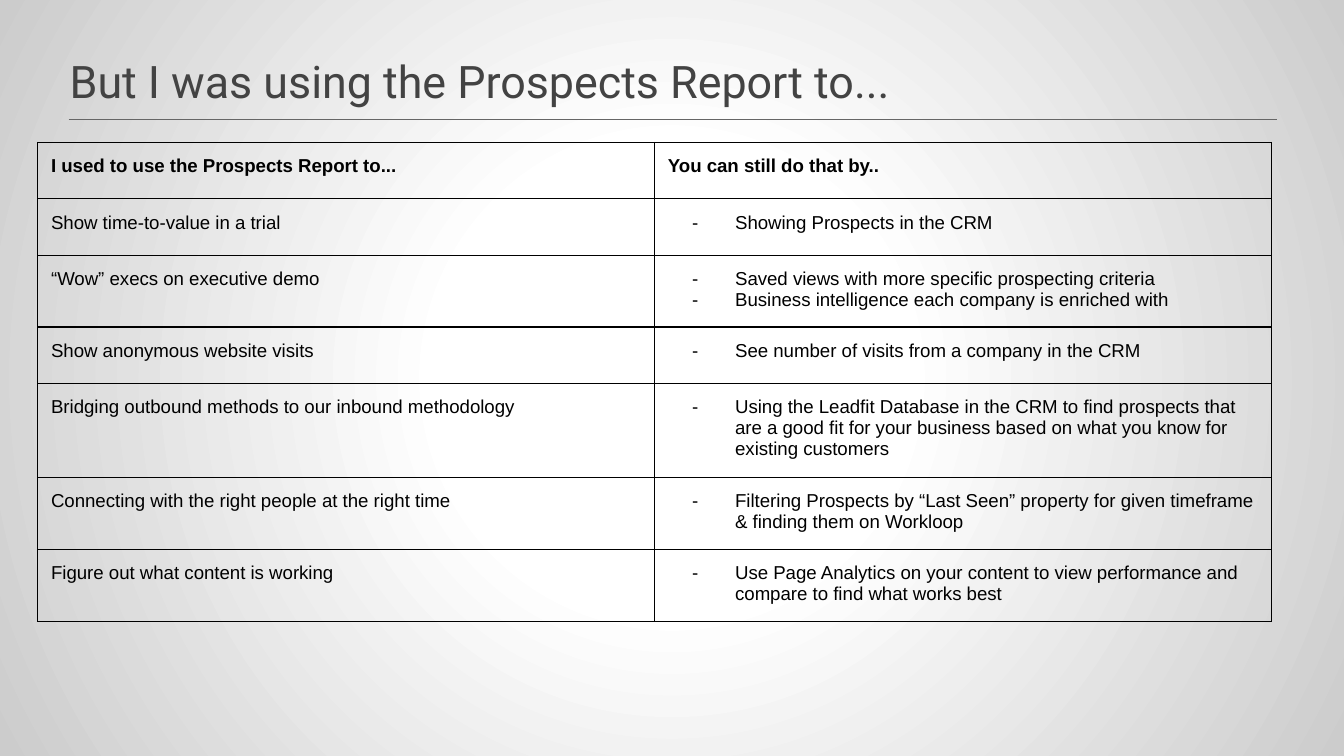
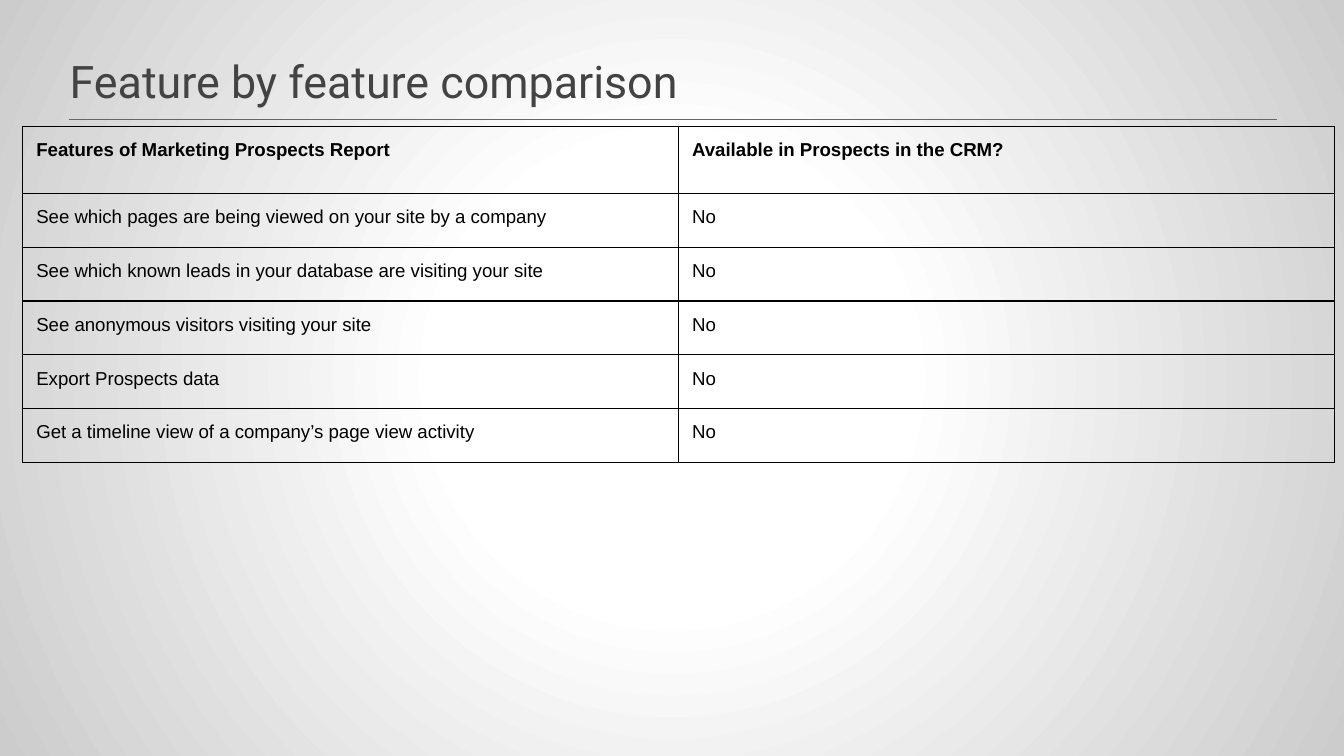
from dataclasses import dataclass

import pptx
import pptx.dml.color
import pptx.enum.shapes
import pptx.enum.text
import pptx.oxml
import pptx.oxml.ns
import pptx.presentation
import pptx.slide
import pptx.table
import pptx.text.text
import pptx.util
from pptx.dml.color import RGBColor
from pptx.util import Inches

TITLE_COLOR = RGBColor(0x43, 0x43, 0x43)
RULE_COLOR = RGBColor(0x66, 0x66, 0x66)
INK = RGBColor(0x00, 0x00, 0x00)
GLOW = RGBColor(0xFF, 0xFF, 0xFF)
EDGE = RGBColor(0xCC, 0xCC, 0xCC)

TITLE_FONT = "Roboto"
TITLE_SIZE = 24
TABLE_FONT = "Arial"
TABLE_SIZE = 10
INSET = Inches(0.1)
LINE_WIDTH = pptx.util.Pt(0.75)
NAMESPACES = pptx.oxml.ns.nsdecls("a")


@dataclass(frozen=True)
class Comparison:
    """A titled two-column table; answers hold one entry per paragraph."""
    title: str
    left: float
    top: float
    column_width: float
    header_height: float
    row_height: float
    header: tuple[str, str]
    rows: list[tuple[str, list[str]]]
    dashed_answers: bool = False


COMPARISONS = [
    Comparison(
        title="But I was using the Prospects Report to...",
        left=0.28, top=1.06, column_width=4.59, header_height=0.42, row_height=0.42,
        header=("I used to use the Prospects Report to...", "You can still do that by.."),
        rows=[
            ("Show time-to-value in a trial", ["Showing Prospects in the CRM"]),
            ("“Wow” execs on executive demo",
             ["Saved views with more specific prospecting criteria",
              "Business intelligence each company is enriched with"]),
            ("Show anonymous website visits",
             ["See number of visits from a company in the CRM"]),
            ("Bridging outbound methods to our inbound methodology",
             ["Using the Leadfit Database in the CRM to find prospects that are a good fit "
              "for your business based on what you know for existing customers"]),
            ("Connecting with the right people at the right time",
             ["Filtering Prospects by “Last Seen” property for given timeframe "
              "& finding them on Workloop"]),
            ("Figure out what content is working",
             ["Use Page Analytics on your content to view performance and compare "
              "to find what works best"]),
        ],
        dashed_answers=True,
    ),
    Comparison(
        title="Feature by feature comparison",
        left=0.17, top=0.94, column_width=4.88, header_height=0.5, row_height=0.4,
        header=("Features of Marketing Prospects Report", "Available in Prospects in the CRM?"),
        rows=[(feature, ["No"]) for feature in (
            "See which pages are being viewed on your site by a company",
            "See which known leads in your database are visiting your site",
            "See anonymous visitors visiting your site",
            "Export Prospects data",
            "Get a timeline view of a company’s page view activity",
        )],
    ),
]


def style_runs(paragraph: pptx.text.text._Paragraph, font: str, size: int,
               color: RGBColor, bold: bool = False) -> None:
    for run in paragraph.runs:
        run.font.name = font
        run.font.size = pptx.util.Pt(size)
        run.font.color.rgb = color
        run.font.bold = bold


def paint_background(slide: pptx.slide.Slide) -> None:
    """Radial glow, white in the middle and grey at the edges."""
    slide.background.fill.solid()
    solid = slide.element.find(".//" + pptx.oxml.ns.qn("p:bgPr"))[0]
    stops = "".join(
        f'<a:gs pos="{percent * 1000}"><a:srgbClr val="{color}"/></a:gs>'
        for percent, color in ((0, GLOW), (30, GLOW), (100, EDGE)))
    glow = pptx.oxml.parse_xml(
        f'<a:gradFill {NAMESPACES}><a:gsLst>{stops}</a:gsLst><a:path path="circle">'
        '<a:fillToRect l="50000" t="50000" r="50000" b="50000"/></a:path></a:gradFill>')
    solid.getparent().replace(solid, glow)


def add_title(slide: pptx.slide.Slide, title: str) -> None:
    """Title text with the thin rule below it."""
    heading = slide.shapes.add_textbox(Inches(0.42), Inches(0.35), Inches(9.03), Inches(0.5))
    frame = heading.text_frame
    frame.word_wrap = True
    frame.vertical_anchor = pptx.enum.text.MSO_ANCHOR.MIDDLE
    frame.margin_left = frame.margin_right = frame.margin_top = frame.margin_bottom = INSET
    frame.text = title
    style_runs(frame.paragraphs[0], TITLE_FONT, TITLE_SIZE, TITLE_COLOR)

    rule = slide.shapes.add_connector(pptx.enum.shapes.MSO_CONNECTOR.STRAIGHT,
                                      Inches(0.51), Inches(0.89), Inches(9.5), Inches(0.89))
    rule.line.color.rgb = RULE_COLOR
    rule.line.width = LINE_WIDTH
    rule.element.spPr.append(pptx.oxml.parse_xml(f"<a:effectLst {NAMESPACES}/>"))


def add_dash(paragraph: pptx.text.text._Paragraph) -> None:
    """Dash bullet in the font and size of the table text."""
    properties = paragraph._p.get_or_add_pPr()
    properties.set("marL", str(Inches(0.5)))
    properties.set("indent", str(Inches(-0.32)))
    for bullet in (f'<a:buClr {NAMESPACES}><a:srgbClr val="{INK}"/></a:buClr>',
                   f'<a:buSzPts {NAMESPACES} val="{TABLE_SIZE * 100}"/>',
                   f'<a:buFont {NAMESPACES} typeface="{TABLE_FONT}"/>',
                   f'<a:buChar {NAMESPACES} char="-"/>'):
        properties.append(pptx.oxml.parse_xml(bullet))
    paragraph._p.append(pptx.oxml.parse_xml(
        f'<a:endParaRPr {NAMESPACES} sz="{TABLE_SIZE * 100}">'
        f'<a:latin typeface="{TABLE_FONT}"/></a:endParaRPr>'))


def fill_cell(cell: pptx.table._Cell, lines: list[str], bold: bool, dashed: bool) -> None:
    cell.margin_left = cell.margin_right = cell.margin_top = cell.margin_bottom = INSET
    cell.text_frame.text = "\n".join(lines)
    for paragraph in cell.text_frame.paragraphs:
        style_runs(paragraph, TABLE_FONT, TABLE_SIZE, INK, bold)
        if dashed:
            add_dash(paragraph)

    # Borders come before the fill in the cell properties
    properties = cell._tc.get_or_add_tcPr()
    for side in ("lnL", "lnR", "lnT", "lnB"):
        properties.append(pptx.oxml.parse_xml(
            f'<a:{side} {NAMESPACES} w="{LINE_WIDTH}"><a:solidFill>'
            f'<a:srgbClr val="{INK}"/></a:solidFill></a:{side}>'))
    cell.fill.background()


def add_comparison_table(slide: pptx.slide.Slide, comparison: Comparison) -> None:
    heights = [comparison.header_height] + [comparison.row_height] * len(comparison.rows)
    table = slide.shapes.add_table(
        len(heights), 2, Inches(comparison.left), Inches(comparison.top),
        Inches(2 * comparison.column_width), Inches(sum(heights))).table
    table.first_row = table.horz_banding = False
    for row, height in zip(table.rows, heights):
        row.height = Inches(height)

    use_heading, answer_heading = comparison.header
    contents = [(use_heading, [answer_heading]), *comparison.rows]
    for index, (use, answers) in enumerate(contents):
        is_header = index == 0
        fill_cell(table.cell(index, 0), [use], is_header, False)
        fill_cell(table.cell(index, 1), answers, is_header,
                  comparison.dashed_answers and not is_header)


def add_comparison_slide(deck: pptx.presentation.Presentation, comparison: Comparison) -> None:
    slide = deck.slides.add_slide(deck.slide_layouts[6])
    paint_background(slide)
    add_title(slide, comparison.title)
    add_comparison_table(slide, comparison)


def main() -> None:
    deck = pptx.Presentation()
    # Widescreen, 16 to 9
    deck.slide_width = Inches(10)
    deck.slide_height = Inches(10 * 9 / 16)
    for comparison in COMPARISONS:
        add_comparison_slide(deck, comparison)
    deck.save("out.pptx")


if __name__ == "__main__":
    main()
